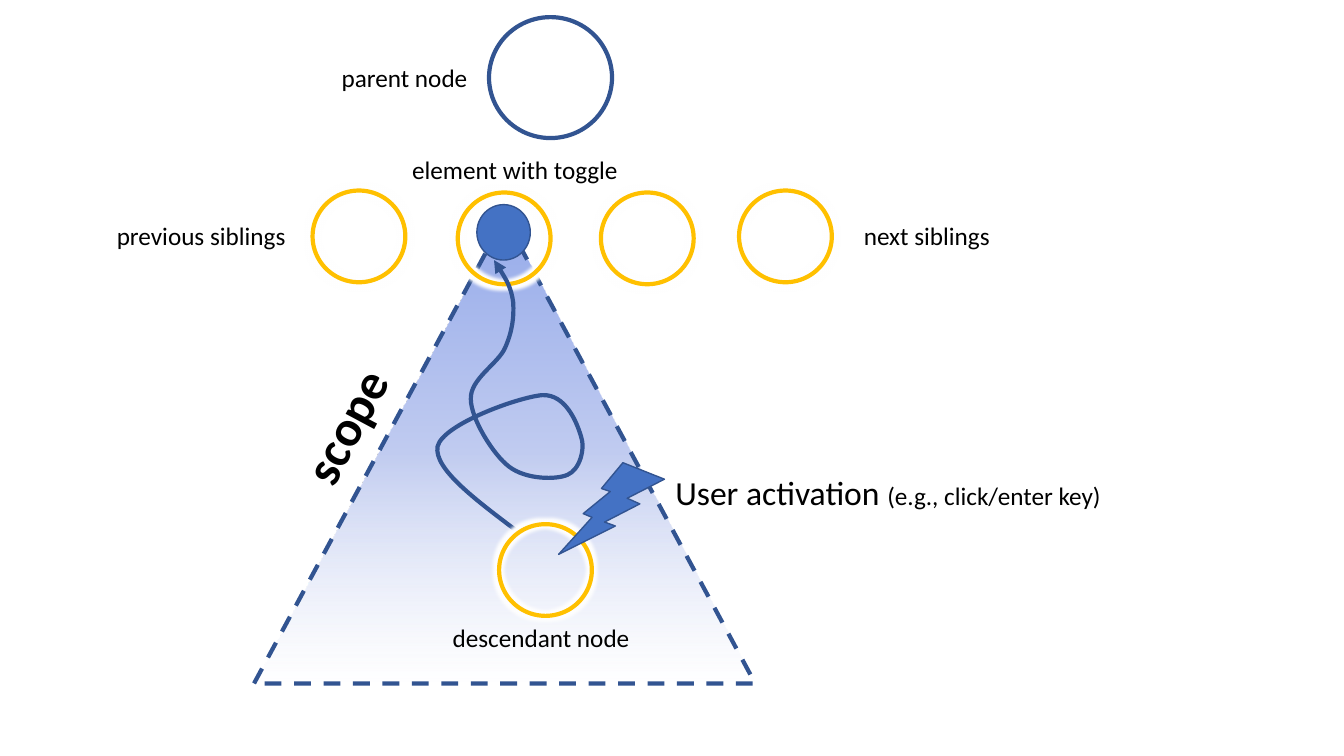
from dataclasses import dataclass

from lxml import etree
from pptx import Presentation, util as u
from pptx.dml.color import RGBColor
from pptx.enum import dml, shapes, text
from pptx.oxml import ns


@dataclass(frozen=True)
class Theme:
    font: str = "Calibri"
    ink: str = "000000"
    navy: str = "325491"
    blue: str = "4472C4"
    gold: str = "FFC000"
    halo: str = "FFFFFF"
    # position, colour, opacity (all in percent)
    fade: tuple = ((0, "96ABEA", 100), (50, "C0CBF0", 100), (100, "E0E5F7", 0))
    label: int = 18
    action: int = 24
    title: int = 36
    thin: int = 1
    thick: int = 3


def apply(target, values):
    for name, value in values.items():
        setattr(target, name, value)


def child(parent, tag, **attributes):
    element = etree.SubElement(parent, ns.qn(tag))
    for name, value in attributes.items():
        element.set(name, str(value))
    return element


class Diagram:
    def __init__(self, slide, theme):
        self.slide = slide
        self.theme = theme

    def style(self, shape, line, width, fill=None, dash=None):
        shape.shadow.inherit = False
        apply(shape.line, {"width": u.Pt(width), "dash_style": dash})
        shape.line.color.rgb = RGBColor.from_string(line)
        if fill:
            shape.fill.solid()
            shape.fill.fore_color.rgb = RGBColor.from_string(fill)
        else:
            shape.fill.background()

    def shape(self, kind, box, line, width, fill=None, dash=None):
        shape = self.slide.shapes.add_shape(kind, *map(u.Inches, box))
        self.style(shape, line, width, fill, dash)
        return shape

    def node(self, left, top):
        """Gold ring with a soft white halo."""
        ring = self.shape(shapes.MSO_SHAPE.OVAL, (left, top, 0.92, 0.91),
                          self.theme.gold, self.theme.thick)
        effects = ring._element.spPr.find(ns.qn("a:effectLst"))
        glow = child(effects, "a:glow", rad=u.Pt(5))
        child(glow, "a:srgbClr", val=self.theme.halo)

    def fade(self, shape):
        """Gradient from top to bottom that ends transparent."""
        shape.fill.gradient()
        shape.fill.gradient_angle = 270
        stops = shape._element.spPr.find(".//" + ns.qn("a:gsLst"))
        for stop in list(stops):
            stops.remove(stop)
        for position, color, opacity in self.theme.fade:
            stop = child(stops, "a:gs", pos=position * 1000)
            color_element = child(stop, "a:srgbClr", val=color)
            child(color_element, "a:alpha", val=opacity * 1000)

    def label(self, box, *runs, rotation=0, bold=False):
        """Runs are pairs of wording and type size."""
        label = self.slide.shapes.add_textbox(*map(u.Inches, box))
        label.rotation = rotation
        apply(label.text_frame, {"word_wrap": False,
                                 "auto_size": text.MSO_AUTO_SIZE.SHAPE_TO_FIT_TEXT})
        paragraph = label.text_frame.paragraphs[0]
        for wording, size in runs:
            run = paragraph.add_run()
            run.text = wording
            apply(run.font, {"name": self.theme.font, "size": u.Pt(size), "bold": bold})
            run.font.color.rgb = RGBColor.from_string(self.theme.ink)

    def curved_arrow(self, start, curves):
        """Each curve is two control points and an end point."""
        points = [tuple(map(u.Inches, point)) for curve in curves for point in curve]
        builder = self.slide.shapes.build_freeform(*map(u.Inches, start))
        builder.add_line_segments(points, close=False)
        arrow = builder.convert_to_shape()
        self.style(arrow, self.theme.navy, self.theme.thick)
        # Join every three straight segments into one Bézier curve
        path = arrow._element.spPr.find(".//" + ns.qn("a:path"))
        segments = path.findall(ns.qn("a:lnTo"))
        for index in range(0, len(segments), 3):
            curve = child(path, "a:cubicBezTo")
            for segment in segments[index:index + 3]:
                curve.append(segment[0])
                path.remove(segment)
        child(arrow.line._get_or_add_ln(), "a:tailEnd", type="triangle")


def main():
    presentation = Presentation()
    apply(presentation, {"slide_width": u.Inches(13.33), "slide_height": u.Inches(7.5)})
    theme = Theme()
    slide = presentation.slides.add_slide(presentation.slide_layouts[6])
    diagram = Diagram(slide, theme)
    preset = shapes.MSO_SHAPE

    # Scope triangle
    scope = diagram.shape(preset.ISOSCELES_TRIANGLE, (2.52, 2.16, 4.97, 4.62),
                          theme.navy, theme.thick, dash=dml.MSO_LINE.DASH)
    diagram.fade(scope)

    # Parent and the row of siblings
    diagram.shape(preset.OVAL, (4.85, 0.17, 1.22, 1.2), theme.navy, theme.thick)
    for left, top in ((3.1, 1.89), (4.54, 1.91), (5.96, 1.91), (7.33, 1.89)):
        diagram.node(left, top)

    # Labels
    for wording, box in (
        ("parent node", (3.29, 0.57, 1.47, 0.4)),
        ("previous siblings", (1.06, 2.14, 1.89, 0.4)),
        ("next siblings", (8.47, 2.14, 1.46, 0.4)),
        ("element with toggle", (3.99, 1.48, 2.27, 0.4)),
        ("descendant node", (4.39, 6.12, 1.98, 0.4)),
    ):
        diagram.label(box, (wording, theme.label))
    diagram.label((2.72, 3.86, 1.41, 0.71), ("scope", theme.title),
                  rotation=298.1, bold=True)
    diagram.label((6.6, 4.63, 4.47, 0.5), ("User activation ", theme.action),
                  ("(e.g., click/enter key)", theme.label))

    # Toggle and the path of the activation up to it
    diagram.shape(preset.OVAL, (4.73, 2.03, 0.53, 0.55),
                  theme.navy, theme.thin, theme.blue)
    diagram.curved_arrow((5.13, 5.27), (
        ((4.72, 4.96), (4.3, 4.65), (4.34, 4.43)),
        ((4.39, 4.21), (5.14, 3.94), (5.38, 3.92)),
        ((5.61, 3.91), (5.72, 4.19), (5.76, 4.32)),
        ((5.81, 4.45), (5.75, 4.66), (5.63, 4.71)),
        ((5.52, 4.76), (5.22, 4.76), (5.05, 4.63)),
        ((4.89, 4.51), (4.67, 4.15), (4.67, 3.96)),
        ((4.66, 3.76), (4.94, 3.61), (5.01, 3.45)),
        ((5.08, 3.29), (5.1, 3.15), (5.09, 3)),
        ((5.07, 2.85), (4.99, 2.72), (4.9, 2.58)),
    ))

    # Descendant and the user's activation
    diagram.node(4.95, 5.2)
    bolt = diagram.shape(preset.LIGHTNING_BOLT, (5.54, 4.59, 1.05, 0.91),
                         theme.navy, theme.thin, theme.blue)
    bolt._element.spPr.find(ns.qn("a:xfrm")).set("flipH", "1")

    presentation.save("out.pptx")


if __name__ == "__main__":
    main()
